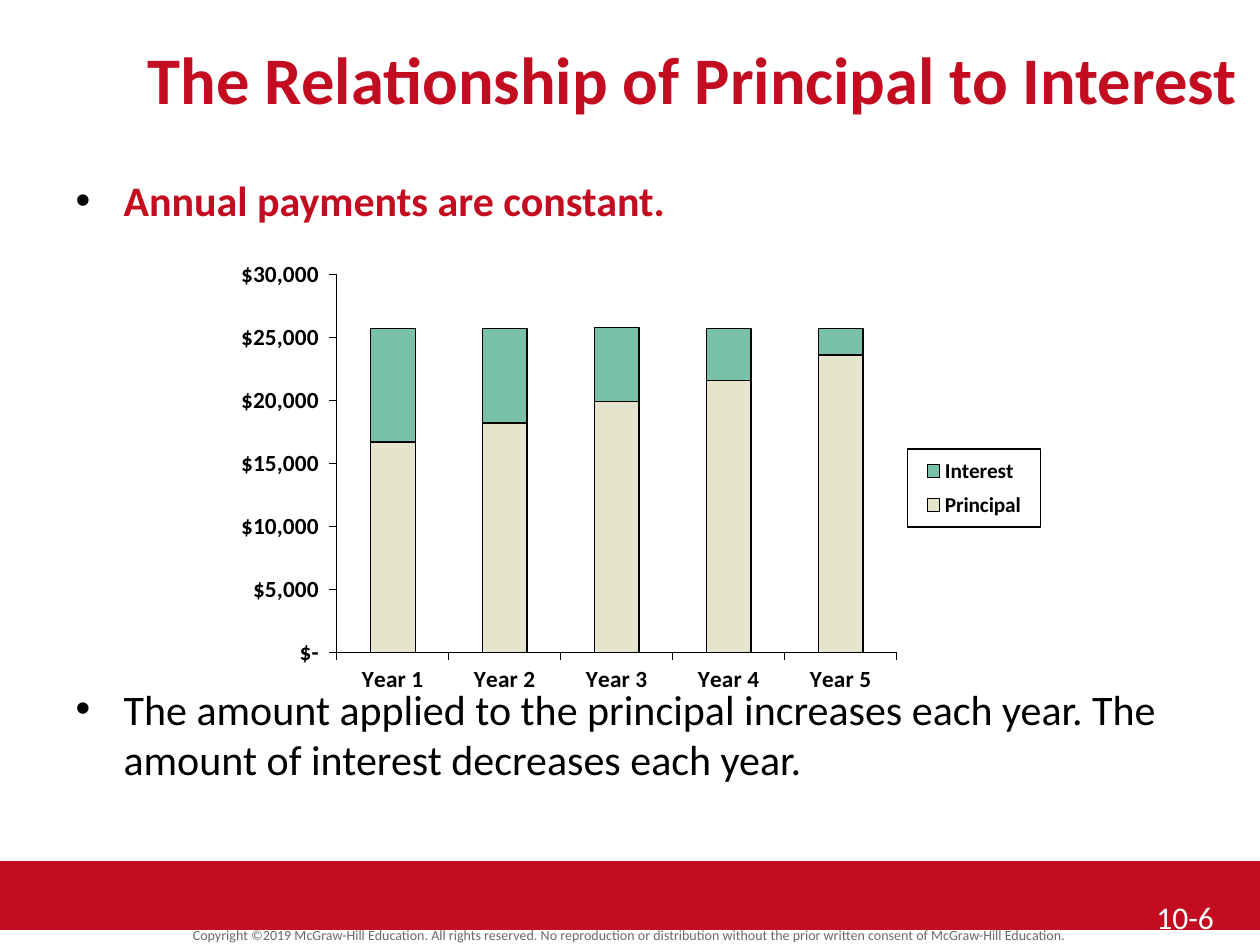
from dataclasses import dataclass

from lxml.etree import SubElement
from pptx import Presentation
from pptx.chart.data import CategoryChartData
from pptx.dml.color import RGBColor
from pptx.enum.chart import XL_CHART_TYPE as ChartType
from pptx.enum.chart import XL_LEGEND_POSITION as LegendPosition
from pptx.enum.chart import XL_TICK_MARK as TickMark
from pptx.enum.shapes import MSO_SHAPE as Shape
from pptx.enum.text import MSO_ANCHOR as Anchor
from pptx.enum.text import MSO_AUTO_SIZE as AutoSize
from pptx.enum.text import PP_ALIGN as Align
from pptx.oxml import parse_xml
from pptx.oxml.ns import nsdecls, qn
from pptx.util import Emu, Pt


@dataclass(frozen=True)
class Theme:
    font: str = "Calibri"
    red: str = "C30C20"
    black: str = "000000"
    white: str = "FFFFFF"
    grey: str = "6A6A6A"
    sand: str = "E6E4CC"
    teal: str = "7AC1AC"
    title: float = 38
    body: float = 24
    page: float = 18
    axis: float = 13.3
    legend: float = 12.2
    copyright: float = 8
    line: float = 0.75


THEME = Theme()
YEARS = [f"Year {number}" for number in range(1, 6)]
SERIES = [
    ("Principal", (16700, 18200, 19900, 21600, 23600), THEME.sand),
    ("Interest", (9000, 7500, 5900, 4100, 2100), THEME.teal),
]
DOLLARS = r'_($* #,##0_);_($* \(#,##0\);_($* "-"_);_(@_)'


def px(count):
    return Emu(round(count * 914400 / 126))


def rgb(color):
    return RGBColor.from_string(color)


def place(shape, left, top, width, height):
    shape.left, shape.top = px(left), px(top)
    shape.width, shape.height = px(width), px(height)


def style_font(font, size, color, bold=False):
    font.name = THEME.font
    font.size = Pt(size)
    font.bold = bold
    font.color.rgb = rgb(color)


def style_line(line):
    line.color.rgb = rgb(THEME.black)
    line.width = Pt(THEME.line)


def prepare_frame(frame, anchor=Anchor.TOP):
    frame.word_wrap = True
    frame.auto_size = AutoSize.NONE
    frame.vertical_anchor = anchor


def fill_title(title, text):
    place(title, 126, 32, 1134, 84)
    prepare_frame(title.text_frame)
    para = title.text_frame.paragraphs[0]
    para.text = text
    para.alignment = Align.CENTER
    style_font(para.font, THEME.title, THEME.red, True)


def add_bullet(para):
    properties = para._p.get_or_add_pPr()
    properties.set("marL", str(px(48)))
    properties.set("indent", str(-px(48)))
    color = SubElement(properties, qn("a:buClr"))
    SubElement(color, qn("a:srgbClr"), val=THEME.black)
    SubElement(properties, qn("a:buFont"), typeface="Arial")
    SubElement(properties, qn("a:buChar"), char="•")


def fill_body(body, items):
    place(body, 63, 168, 1134, 651)
    frame = body.text_frame
    prepare_frame(frame)
    for index, (text, color, bold, before) in enumerate(items):
        para = frame.add_paragraph() if index else frame.paragraphs[0]
        para.text = text
        add_bullet(para)
        para.space_before = Pt(before)
        para.space_after = Pt(8)
        style_font(para.font, THEME.body, color, bold)


def add_band(slide):
    band = slide.shapes.add_shape(Shape.RECTANGLE, px(0), px(861), px(1260), px(69))
    band.shadow.inherit = False
    band.fill.solid()
    band.fill.fore_color.rgb = rgb(THEME.red)
    band.line.fill.background()


def add_label(slide, text, bounds, size, color, align=Align.LEFT, anchor=Anchor.TOP):
    box = slide.shapes.add_textbox(*map(px, bounds))
    prepare_frame(box.text_frame, anchor)
    para = box.text_frame.paragraphs[0]
    para.text = text
    para.alignment = align
    style_font(para.font, size, color)
    return box


def add_copyright(slide, text):
    box = add_label(slide, text, (0, 925, 1260, 24), THEME.copyright, THEME.grey,
                    Align.CENTER, Anchor.MIDDLE)
    frame = box.text_frame
    frame.margin_top = frame.margin_bottom = 0
    frame.paragraphs[0].line_spacing = 0.8


def manual_layout(x, y, width, height, inner=False):
    target = '<c:layoutTarget val="inner"/>' if inner else ""
    return parse_xml(
        f'<c:layout {nsdecls("c")}><c:manualLayout>{target}'
        '<c:xMode val="edge"/><c:yMode val="edge"/>'
        f'<c:x val="{x}"/><c:y val="{y}"/><c:w val="{width}"/><c:h val="{height}"/>'
        "</c:manualLayout></c:layout>"
    )


def drop_layout(element):
    for layout in element.findall(qn("c:layout")):
        element.remove(layout)


def style_axis(axis):
    axis.has_major_gridlines = False
    axis.major_tick_mark = TickMark.OUTSIDE
    axis.minor_tick_mark = TickMark.NONE
    style_font(axis.tick_labels.font, THEME.axis, THEME.black, True)
    style_line(axis.format.line)


def add_legend(chart):
    chart.has_legend = True
    legend = chart.legend
    legend.position = LegendPosition.RIGHT
    legend.include_in_layout = False
    style_font(legend.font, THEME.legend, THEME.black, True)
    element = chart.element.find(".//" + qn("c:legend"))
    drop_layout(element)
    element.find(qn("c:legendPos")).addnext(manual_layout(0.83, 0.41, 0.16, 0.17))
    element.find(qn("c:overlay")).addnext(parse_xml(
        f'<c:spPr {nsdecls("c", "a")}><a:ln w="{Pt(THEME.line)}"><a:solidFill>'
        f'<a:srgbClr val="{THEME.black}"/></a:solidFill></a:ln></c:spPr>'
    ))


def add_payment_chart(slide):
    data = CategoryChartData()
    data.categories = YEARS
    for name, values, _ in SERIES:
        data.add_series(name, values)
    chart = slide.shapes.add_chart(
        ChartType.COLUMN_STACKED, px(217), px(260), px(832), px(459), data).chart
    chart.has_title = False
    style_font(chart.font, THEME.axis, THEME.black, True)
    plot = chart.plots[0]
    plot.gap_width, plot.overlap = 150, 100
    plot.vary_by_categories = False
    for series, (_, _, color) in zip(plot.series, SERIES):
        series.format.fill.solid()
        series.format.fill.fore_color.rgb = rgb(color)
        style_line(series.format.line)
    for axis in (chart.category_axis, chart.value_axis):
        style_axis(axis)
    values = chart.value_axis
    values.minimum_scale, values.maximum_scale, values.major_unit = 0, 30000, 5000
    values.tick_labels.number_format = DOLLARS
    values.tick_labels.number_format_is_linked = False
    area = chart.element.find(".//" + qn("c:plotArea"))
    drop_layout(area)
    area.insert(0, manual_layout(0.144, 0.028, 0.673, 0.827, inner=True))
    add_legend(chart)


def main():
    deck = Presentation()
    deck.slide_width, deck.slide_height = px(1260), px(945)
    slide = deck.slides.add_slide(deck.slide_layouts[1])
    fill_title(slide.shapes.title, "The Relationship of Principal to Interest")
    fill_body(slide.placeholders[1], [
        ("Annual payments are constant.", THEME.red, True, 0),
        ("The amount applied to the principal increases each year. "
         "The amount of interest decreases each year.", THEME.black, False, 254),
    ])
    add_band(slide)
    add_copyright(slide, "Copyright ©2019 McGraw-Hill Education. All rights reserved. "
                  "No reproduction or distribution without the prior written consent "
                  "of McGraw-Hill Education.")
    add_label(slide, "10-6", (1144, 892, 116, 53), THEME.page, THEME.white)
    add_payment_chart(slide)
    deck.save("out.pptx")


if __name__ == "__main__":
    main()
